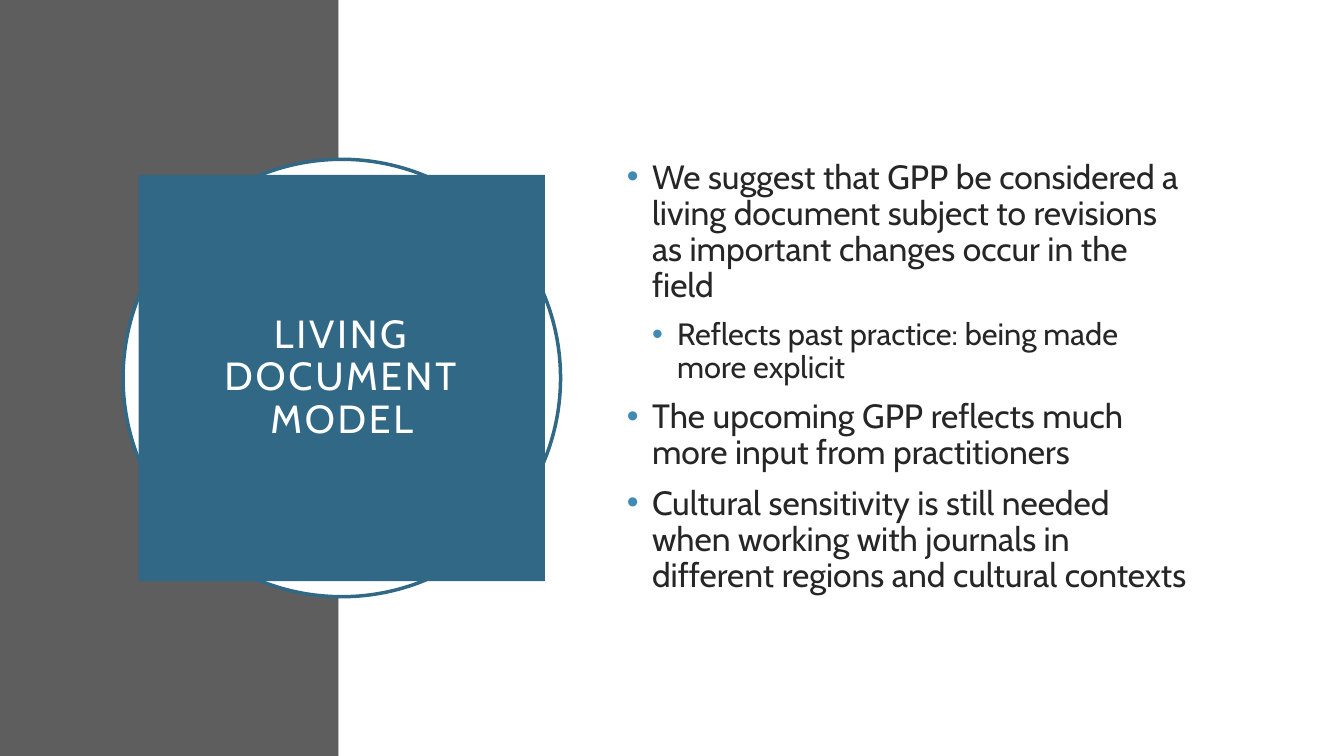
from lxml import etree
from pptx import Presentation
from pptx.dml.color import RGBColor
from pptx.enum.shapes import MSO_SHAPE
from pptx.enum.text import MSO_ANCHOR, MSO_AUTO_SIZE, PP_ALIGN
from pptx.oxml.ns import qn
from pptx.util import Inches, Pt

RECTANGLE, OVAL = MSO_SHAPE.RECTANGLE, MSO_SHAPE.OVAL
MIDDLE, CENTER = MSO_ANCHOR.MIDDLE, PP_ALIGN.CENTER
NO_AUTOFIT = MSO_AUTO_SIZE.NONE

GREY = RGBColor(0x5E, 0x5E, 0x5E)
WHITE = RGBColor(0xFF, 0xFF, 0xFF)
BLUE = RGBColor(0x31, 0x68, 0x86)
BULLET_BLUE = RGBColor(0x41, 0x8A, 0xB3)
INK = RGBColor(0x26, 0x26, 0x26)

TITLE_ONLY = 5
SIDEBAR = 25.2       # sidebar width, percent of the slide
BADGE_CENTER = 25.43  # middle of ring and title, percent of the slide

POINTS = [
    (0, "We suggest that GPP be considered a living document subject to "
        "revisions as important changes occur in the field"),
    (1, "Reflects past practice: being made more explicit"),
    (0, "The upcoming GPP reflects much more input from practitioners"),
    (0, "Cultural sensitivity is still needed when working with journals in "
        "different regions and cultural contexts"),
]


class SlideBuilder:
    """Holds the style and the current slide; lengths are percent of its size."""

    font = "Cabin"
    line_spacing = 0.9
    level_sizes = (24, 22)
    indent = Inches(0.25)

    def __init__(self, deck):
        self.deck = deck
        self.page = deck.slides.add_slide(deck.slide_layouts[TITLE_ONLY])

    def area(self, left, top, width, height):
        across, down = self.deck.slide_width / 100, self.deck.slide_height / 100
        return (round(left * across), round(top * down),
                round(width * across), round(height * down))

    def badge_area(self, side):
        """A square of the given width, centred on the badge's middle."""
        height = side * self.deck.slide_width / self.deck.slide_height
        return self.area(BADGE_CENTER - side / 2, 50 - height / 2, side, height)

    def shape(self, kind, area, fill, line=None):
        shape = self.page.shapes.add_shape(kind, *area)
        shape.shadow.inherit = False
        shape.fill.solid()
        shape.fill.fore_color.rgb = fill
        if line is None:
            shape.line.fill.background()
        else:
            shape.line.color.rgb = line
            shape.line.width = Pt(2.5)

    def frame(self, box):
        frame = box.text_frame
        frame.word_wrap = True
        frame.auto_size = NO_AUTOFIT
        frame.vertical_anchor = MIDDLE
        return frame

    def format(self, para, size, color):
        para.line_spacing = self.line_spacing
        for span in para.runs:
            span.font.name = self.font
            span.font.size = Pt(size)
            span.font.color.rgb = color

    def title(self, text, area):
        box = self.page.shapes.title
        box.left, box.top, box.width, box.height = area
        box.fill.solid()
        box.fill.fore_color.rgb = BLUE
        frame = self.frame(box)
        frame.margin_left = frame.margin_right = Inches(0.79)
        frame.text = text
        para = frame.paragraphs[0]
        para.alignment = CENTER
        self.format(para, 28, WHITE)
        para.runs[0].font._element.set("spc", "200")
        # Bring the title in front of the ring
        self.page.shapes._spTree.append(box._element)

    def bullet(self, para, level):
        properties = para._p.get_or_add_pPr()
        properties.set("marL", str(self.indent * (level + 1)))
        properties.set("indent", str(-self.indent))
        color = etree.SubElement(properties, qn("a:buClr"))
        etree.SubElement(color, qn("a:srgbClr"), val=str(BULLET_BLUE))
        etree.SubElement(properties, qn("a:buFont"), typeface="Arial")
        etree.SubElement(properties, qn("a:buChar"), char="•")

    def bullets(self, points, area):
        frame = self.frame(self.page.shapes.add_textbox(*area))
        for index, (level, text) in enumerate(points):
            para = frame.add_paragraph() if index else frame.paragraphs[0]
            para.text = text
            para.level = level
            para.space_before = Pt(10)
            self.format(para, self.level_sizes[level], INK)
            self.bullet(para, level)


def main():
    deck = Presentation()
    deck.slide_width, deck.slide_height = Inches(13.33), Inches(7.5)
    slide = SlideBuilder(deck)

    # Background panels
    slide.shape(RECTANGLE, slide.area(0, 0, SIDEBAR, 100), GREY)
    slide.shape(RECTANGLE, slide.area(SIDEBAR, 0, 100 - SIDEBAR, 100), WHITE)

    # Title badge with its ring
    slide.shape(OVAL, slide.badge_area(32.55), WHITE, BLUE)
    slide.title("LIVING DOCUMENT MODEL", slide.badge_area(30.23))

    # Main points
    slide.bullets(POINTS, slide.area(45.9, 20.4, 43.65, 59.07))

    deck.save("out.pptx")


if __name__ == "__main__":
    main()
